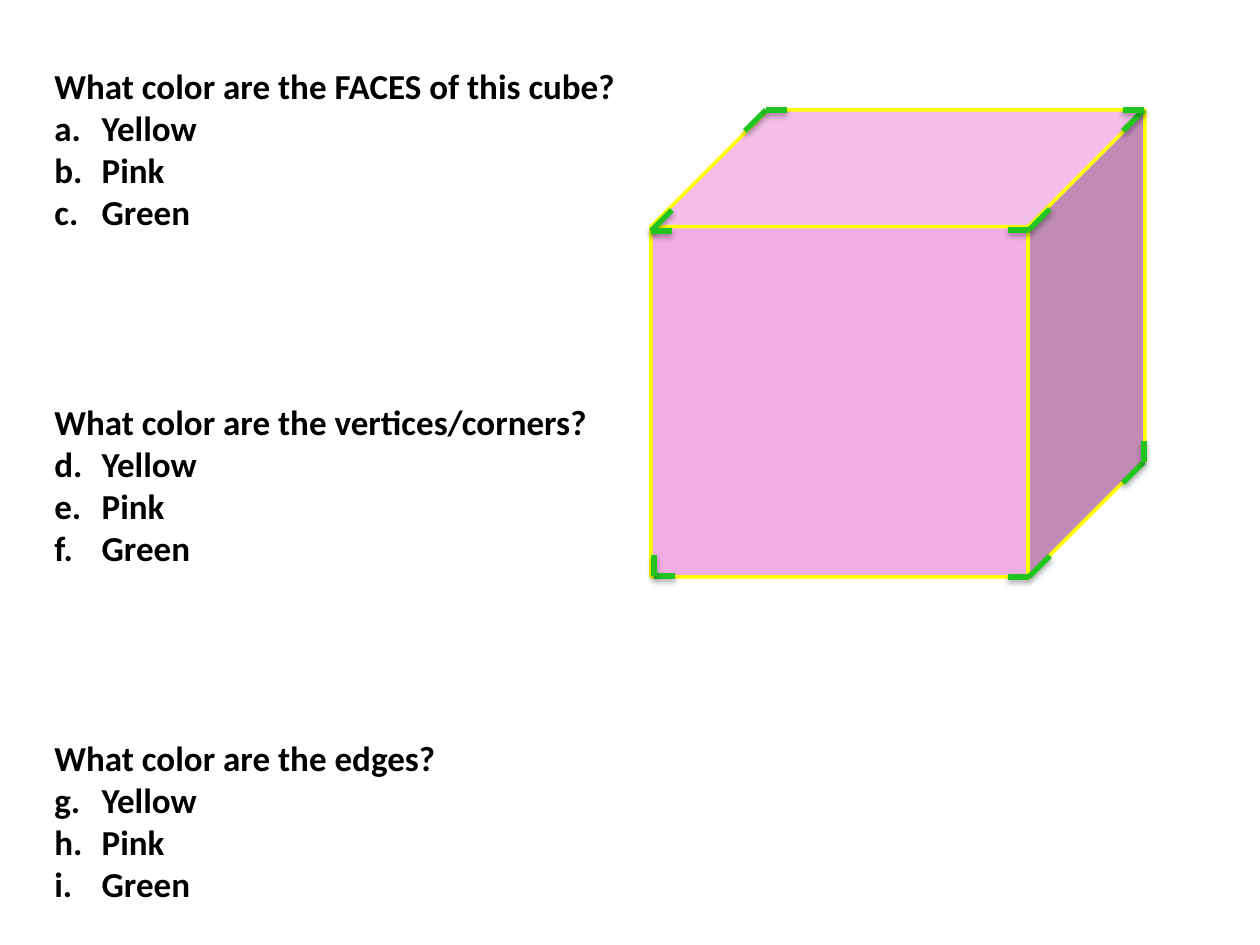
"""Build a quiz slide about the faces, corners and edges of a cube."""
import pptx
import pptx.dml.color
import pptx.enum.shapes
import pptx.oxml
import pptx.oxml.ns
import pptx.util

PX = 914400 / 126
THEME = {
    "font": "Calibri",
    "size": 20,
    "text": "000000",
    "face": "F0AEE3",
    "edge": "FFFF00",
    "corner": "22C422",
    "edge_width": 2,
    "corner_width": 3,
}
NS = pptx.oxml.ns.nsdecls("a")
SHADOW = (
    f'<a:effectLst {NS}><a:outerShdw blurRad="40000" dist="23000" dir="5400000" rotWithShape="0">'
    '<a:srgbClr val="000000"><a:alpha val="35000"/></a:srgbClr></a:outerShdw></a:effectLst>'
)


def px(*lengths):
    return [pptx.util.Emu(round(n * PX)) for n in lengths]


def add_text(p, text, space_before=0, start=None):
    if start:
        pPr = p._p.get_or_add_pPr()
        pPr.set("marL", "342900")
        pPr.set("indent", "-342900")
        pPr.append(pptx.oxml.parse_xml(f'<a:buAutoNum {NS} type="alphaLcPeriod" startAt="{start}"/>'))
    p.space_before = pptx.util.Pt(space_before)
    r = p.add_run()
    r.text = text
    r.font.name = THEME["font"]
    r.font.size = pptx.util.Pt(THEME["size"])
    r.font.bold = True
    r.font.color.rgb = pptx.dml.color.RGBColor.from_string(THEME["text"])


prs = pptx.Presentation()
prs.slide_width, prs.slide_height = px(1260, 945)
s = prs.slides.add_slide(prs.slide_layouts[6])

questions = [
    "What color are the FACES of this cube?",
    "What color are the vertices/corners?",
    "What color are the edges?",
]
answers = ["Yellow", "Pink", "Green"]
tf = s.shapes.add_textbox(*px(42, 58, 591, 900)).text_frame
tf.word_wrap = True
for i, question in enumerate(questions):
    p = tf.add_paragraph() if i else tf.paragraphs[0]
    add_text(p, question, space_before=96 if i else 0)
    for answer in answers:
        add_text(tf.add_paragraph(), answer, start=1 + i * len(answers))

sp = s.shapes.add_shape(pptx.enum.shapes.MSO_SHAPE.CUBE, *px(651, 110, 494, 467))
sp.shadow.inherit = False
sp.fill.solid()
sp.fill.fore_color.rgb = pptx.dml.color.RGBColor.from_string(THEME["face"])
sp.line.color.rgb = pptx.dml.color.RGBColor.from_string(THEME["edge"])
sp.line.width = pptx.util.Pt(THEME["edge_width"])

TICK = 21
LEFT, RIGHT, UP = (-1, 0), (1, 0), (0, -1)
UP_RIGHT, DOWN_LEFT = (1, -1), (-1, 1)
corners = [
    (651, 231, [UP_RIGHT, RIGHT]),
    (766, 110, [DOWN_LEFT, RIGHT]),
    (1029, 230, [UP_RIGHT, LEFT]),
    (1144, 110, [DOWN_LEFT, LEFT]),
    (1029, 577, [UP_RIGHT, LEFT]),
    (1144, 462, [DOWN_LEFT, UP]),
    (654, 576, [RIGHT, UP]),
]
for x, y, directions in corners:
    for dx, dy in directions:
        ends = px(x, y, x + dx * TICK, y + dy * TICK)
        line = s.shapes.add_connector(pptx.enum.shapes.MSO_CONNECTOR.STRAIGHT, *ends)
        line.line.color.rgb = pptx.dml.color.RGBColor.from_string(THEME["corner"])
        line.line.width = pptx.util.Pt(THEME["corner_width"])
        line._element.spPr.append(pptx.oxml.parse_xml(SHADOW))

prs.save("out.pptx")
